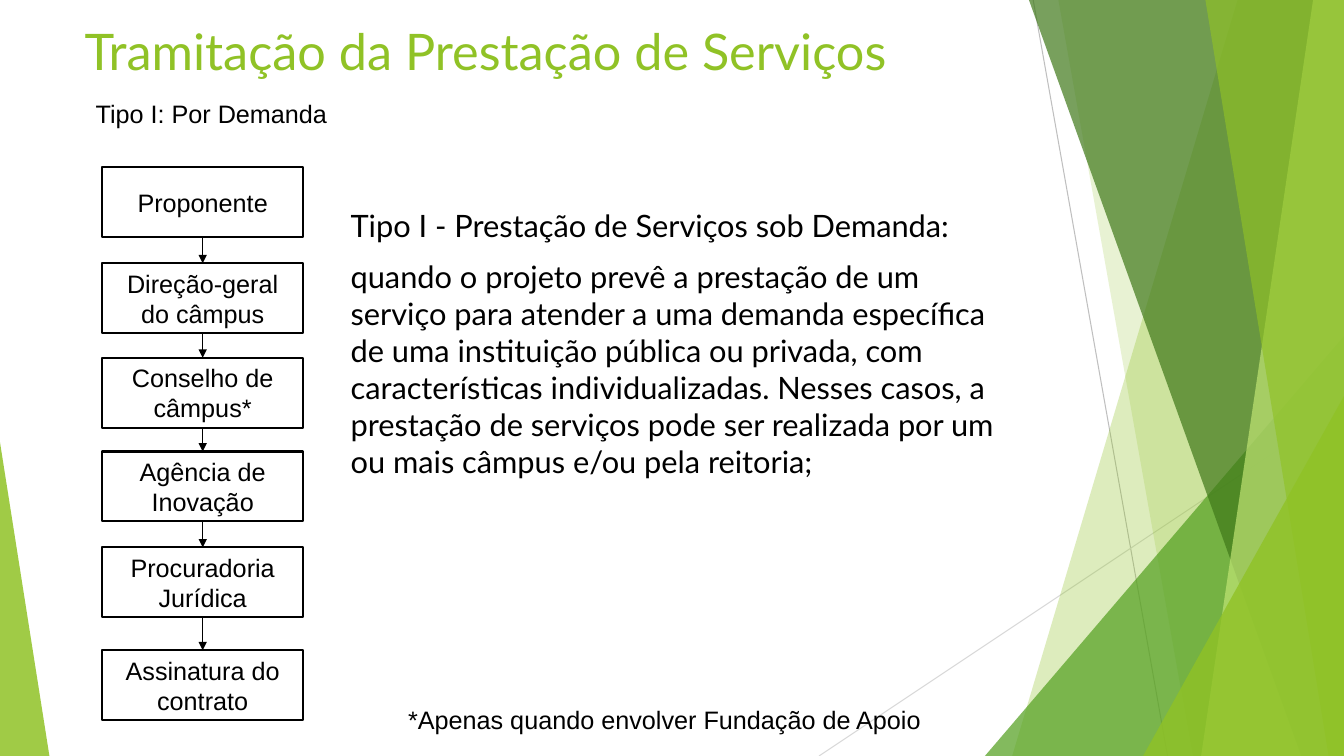
import pptx
import pptx.util
import pptx.dml.color
import pptx.enum.shapes
import pptx.enum.text
import pptx.oxml
import pptx.oxml.ns

Pt = pptx.util.Pt
RGB = pptx.dml.color.RGBColor
ALIGN = pptx.enum.text.PP_ALIGN
ANCHOR = pptx.enum.text.MSO_ANCHOR
SHAPE = pptx.enum.shapes.MSO_SHAPE
LINK = pptx.enum.shapes.MSO_CONNECTOR.STRAIGHT

BLACK = RGB(0, 0, 0)
LIME = RGB(0x90, 0xC2, 0x26)
GREEN = RGB(0x54, 0xA0, 0x21)
DARK = RGB(0x3F, 0x78, 0x19)
PALE = RGB(0xC0, 0xE4, 0x74)
GRAY = RGB(0xBF, 0xBF, 0xBF)
LIGHT = RGB(0xD9, 0xD9, 0xD9)

WIDE, HIGH = 960, 540
STEPS = [
    ("Proponente", 119.5),
    ("Direção-geral do câmpus", 188),
    ("Conselho de câmpus*", 255.5),
    ("Agência de Inovação", 322.5),
    ("Procuradoria Jurídica", 391),
    ("Assinatura do contrato", 464.5),
]


def add_xml(parent, tag, **attrs):
    node = pptx.oxml.parse_xml(f"<a:{tag} {pptx.oxml.ns.nsdecls('a')}/>")
    for key, value in attrs.items():
        node.set(key, str(value))
    parent.append(node)


def write(frame, *texts, font="Arial", size=18, color=BLACK, align=ALIGN.LEFT,
          anchor=ANCHOR.TOP, before=0, wrap=True):
    frame.word_wrap = wrap
    frame.vertical_anchor = anchor
    for i, text in enumerate(texts):
        para = frame.add_paragraph() if i else frame.paragraphs[0]
        para.alignment = align
        para.space_before = Pt(before)
        run = para.add_run()
        run.text = text
        run.font.name, run.font.size = font, Pt(size)
        run.font.color.rgb = color


def add_text(slide, box, *texts, **style):
    shape = slide.shapes.add_textbox(*map(Pt, box))
    write(shape.text_frame, *texts, **style)


def add_line(slide, start, end, color, width, arrow=False):
    line = slide.shapes.add_connector(LINK, *map(Pt, start + end))
    line.line.color.rgb = color
    line.line.width = Pt(width)
    if arrow:
        add_xml(line.line._get_or_add_ln(), "tailEnd", type="triangle")
    add_xml(line._element.spPr, "effectLst")


def tint(shape, color, alpha):
    shape.shadow.inherit = False
    shape.fill.solid()
    shape.fill.fore_color.rgb = color
    shape.line.fill.background()
    fill = shape._element.spPr.find(pptx.oxml.ns.qn("a:solidFill"))
    add_xml(fill[0], "alpha", val=alpha * 1000)


def add_band(slide, top, base, color, alpha):
    """Fill from a slanted left edge to the right side of the slide."""
    form = slide.shapes.build_freeform(Pt(top), 0, scale=1.0)
    corners = [(WIDE, 0), (WIDE, HIGH), (base, HIGH)]
    form.add_line_segments([(Pt(x), Pt(y)) for x, y in corners])
    tint(form.convert_to_shape(), color, alpha)


def add_wedge(slide, left, top, width, apex, color, alpha):
    """Stand a triangle on the bottom of the slide."""
    box = map(Pt, (left, top, width, HIGH - top))
    shape = slide.shapes.add_shape(SHAPE.ISOSCELES_TRIANGLE, *box)
    shape.adjustments[0] = apex
    tint(shape, color, alpha)


def add_decor(slide):
    add_line(slide, (738, 0), (834, HIGH), GRAY, 0.75)
    add_line(slide, (WIDE, 290), (585, HIGH), LIGHT, 0.75)
    add_band(slide, 884, 723, LIME, 30)
    add_band(slide, 756, 852, LIME, 20)
    add_wedge(slide, 703.5, 240, 256.5, 1, GREEN, 72)
    add_band(slide, 735, 929.5, DARK, 70)
    add_band(slide, 938, 858, PALE, 70)
    add_band(slide, 861, 949, LIME, 65)
    add_wedge(slide, 816.5, 283, 143.5, 1, LIME, 80)
    add_wedge(slide, 0, 316, 35.3, 0, LIME, 85)


def add_flow(slide, left, width, height):
    mid = left + width / 2
    for i, (label, top) in enumerate(STEPS):
        box = slide.shapes.add_shape(
            SHAPE.RECTANGLE, *map(Pt, (left, top, width, height)))
        box.shadow.inherit = False
        box.fill.background()
        box.line.color.rgb = BLACK
        box.line.width = Pt(1.5)
        write(box.text_frame, label, align=ALIGN.CENTER, anchor=ANCHOR.MIDDLE)
        if i:
            last = STEPS[i - 1][1] + height
            add_line(slide, (mid, last), (mid, top), BLACK, 1, arrow=True)


def main():
    deck = pptx.Presentation()
    deck.slide_width, deck.slide_height = Pt(WIDE), Pt(HIGH)
    slide = deck.slides.add_slide(deck.slide_layouts[6])

    # Green bands at the sides
    add_decor(slide)

    # Steps on the left
    add_flow(slide, 72.8, 144, 50)

    # Title, type, body and footnote
    add_text(slide, (53.3, 10.8, 677, 57), "Tramitação da Prestação de Serviços",
             font="Lato", size=36, color=LIME)
    add_text(slide, (61.2, 67, 181.5, 29), "Tipo I: Por Demanda", wrap=False)
    add_text(slide, (243.4, 144, 487.5, 340),
             "Tipo I - Prestação de Serviços sob Demanda:",
             "quando o projeto prevê a prestação de um serviço para atender a uma "
             "demanda específica de uma instituição pública ou privada, com "
             "características individualizadas. Nesses casos, a prestação de "
             "serviços pode ser realizada por um ou mais câmpus e/ou pela reitoria;",
             font="Lato", size=22, before=10)
    add_text(slide, (284.4, 499.7, 396, 29),
             "*Apenas quando envolver Fundação de Apoio")

    deck.save("out.pptx")


if __name__ == "__main__":
    main()
